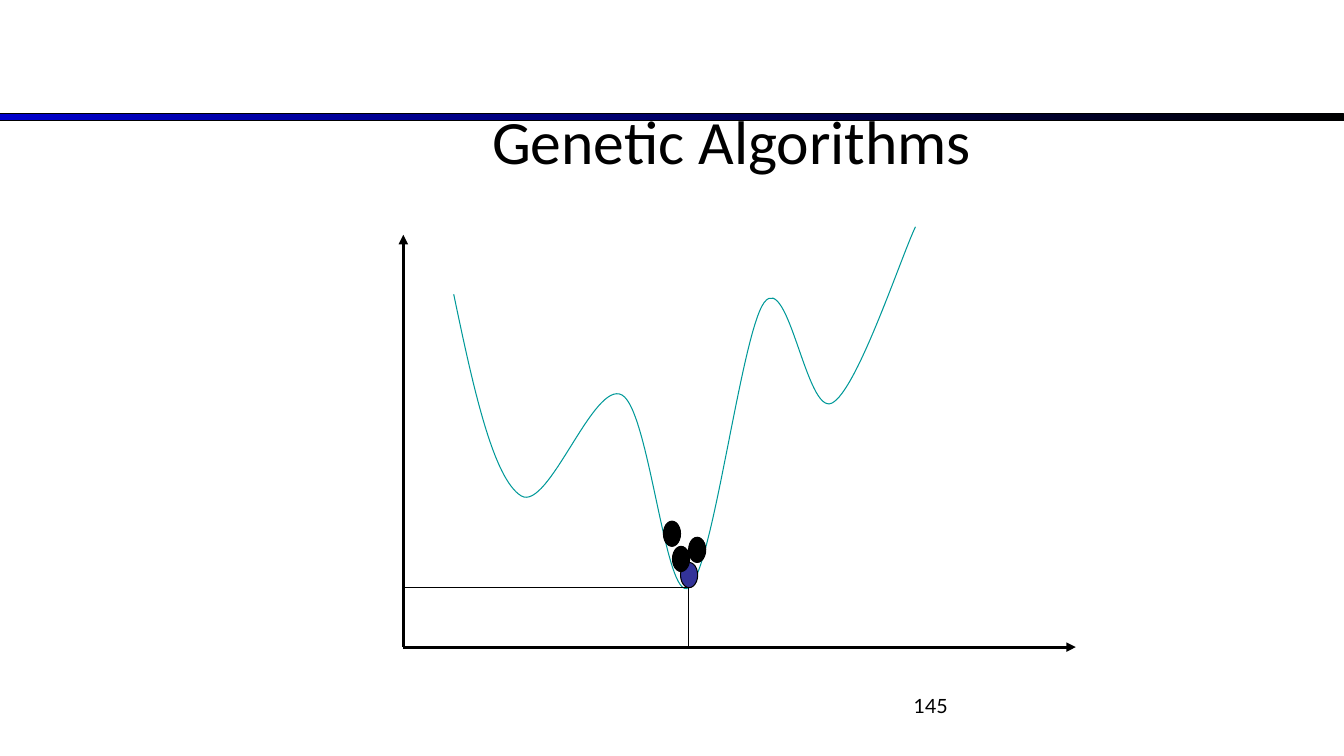
import pptx
import pptx.util
import pptx.dml.color
import pptx.enum.shapes
import pptx.enum.text
import pptx.oxml
import pptx.oxml.ns

Inches, Pt = pptx.util.Inches, pptx.util.Pt
SHAPE = pptx.enum.shapes.MSO_SHAPE
ALIGN = pptx.enum.text.PP_ALIGN
ANCHOR = pptx.enum.text.MSO_ANCHOR

# Content
COLORS = {"black": "000000", "bar": "0000CC", "curve": "009999", "best": "333399"}
# text, box, size, font, alignment, anchor
TEXTS = [
    ("145", (7.17, 6.83, 2.33, 0.52), 14, "Lato", ALIGN.RIGHT, ANCHOR.TOP),
    ("Genetic Algorithms", (3, 0.94, 8.52, 0.9), 44, "Calibri", ALIGN.CENTER, ANCHOR.MIDDLE),
]
ORIGIN, X_END, Y_END = (4, 6.42), (10.67, 6.42), (4, 2.33)
MINIMUM = (6.83, 5.83)
CURVE_START = (4.5, 2.92)
# Two control points and an end point per Bezier segment
CURVE = [
    (4.69, 3.83), (4.89, 4.75), (5.17, 4.92),
    (5.44, 5.08), (5.89, 3.76), (6.17, 3.92),
    (6.44, 4.07), (6.6, 5.99), (6.83, 5.83),
    (7.07, 5.68), (7.35, 3.31), (7.58, 3),
    (7.82, 2.69), (8, 4.12), (8.25, 4),
    (8.5, 3.88), (8.94, 2.54), (9.08, 2.25),
]
INDIVIDUAL_SIZE = (0.17, 0.25)
INDIVIDUALS = [
    (6.83, 5.33, "black"), (6.58, 5.17, "black"),
    (6.75, 5.58, "best"), (6.67, 5.42, "black"),
]

prs = pptx.Presentation()
prs.slide_width, prs.slide_height = Inches(13.33), Inches(7.5)
s = prs.slides.add_slide(prs.slide_layouts[6])


def rgb(name):
    return pptx.dml.color.RGBColor.from_string(COLORS[name])


def outline(sp, color="black", width=0.75):
    sp.line.color.rgb = rgb(color)
    sp.line.width = Pt(width)


def add_shape(kind, box):
    sp = s.shapes.add_shape(kind, *map(Inches, box))
    sp.shadow.inherit = False
    outline(sp)
    return sp


def add_line(start, end, width=0.75, arrow=False):
    c = s.shapes.add_connector(
        pptx.enum.shapes.MSO_CONNECTOR.STRAIGHT, *map(Inches, start + end))
    outline(c, width=width)
    props = c._element.spPr
    if arrow:
        tip = pptx.oxml.parse_xml(
            f'<a:tailEnd {pptx.oxml.ns.nsdecls("a")} type="triangle"/>')
        c.line._get_or_add_ln().append(tip)
    props.append(pptx.oxml.parse_xml(f'<a:effectLst {pptx.oxml.ns.nsdecls("a")}/>'))


# Gradient bar
bar = add_shape(SHAPE.RECTANGLE, (0, 1.13, 13.33, 0.07))
bar.fill.gradient()
bar.fill.gradient_angle = 0
for stop, color in zip(bar.fill.gradient_stops, ("bar", "black")):
    stop.color.rgb = rgb(color)

# Title and slide number
for text, box, size, font, align, anchor in TEXTS:
    tf = s.shapes.add_textbox(*map(Inches, box)).text_frame
    tf.word_wrap = True
    tf.vertical_anchor = anchor
    p = tf.paragraphs[0]
    p.text, p.alignment = text, align
    p.font.size, p.font.name = Pt(size), font
    p.font.color.rgb = rgb("black")

# Axes
for end in (Y_END, X_END):
    add_line(ORIGIN, end, 2.25, arrow=True)

# Fitness curve: each three straight segments become one Bezier segment
builder = s.shapes.build_freeform(*map(Inches, CURVE_START))
builder.add_line_segments([tuple(map(Inches, pt)) for pt in CURVE], close=False)
curve = builder.convert_to_shape()
curve.shadow.inherit = False
curve.fill.background()
outline(curve, "curve")
steps = curve._element.findall(".//" + pptx.oxml.ns.qn("a:lnTo"))
for i in range(0, len(steps), 3):
    bezier = pptx.oxml.parse_xml(f'<a:cubicBezTo {pptx.oxml.ns.nsdecls("a")}/>')
    steps[i].addprevious(bezier)
    for step in steps[i:i + 3]:
        bezier.append(step[0])
        step.getparent().remove(step)

# Population around the minimum
for x, y, color in INDIVIDUALS:
    sp = add_shape(SHAPE.OVAL, (x, y) + INDIVIDUAL_SIZE)
    sp.fill.solid()
    sp.fill.fore_color.rgb = rgb(color)

# Guides from the minimum to both axes
for foot in ((MINIMUM[0], ORIGIN[1]), (ORIGIN[0], MINIMUM[1])):
    add_line(MINIMUM, foot)

prs.save("out.pptx")
